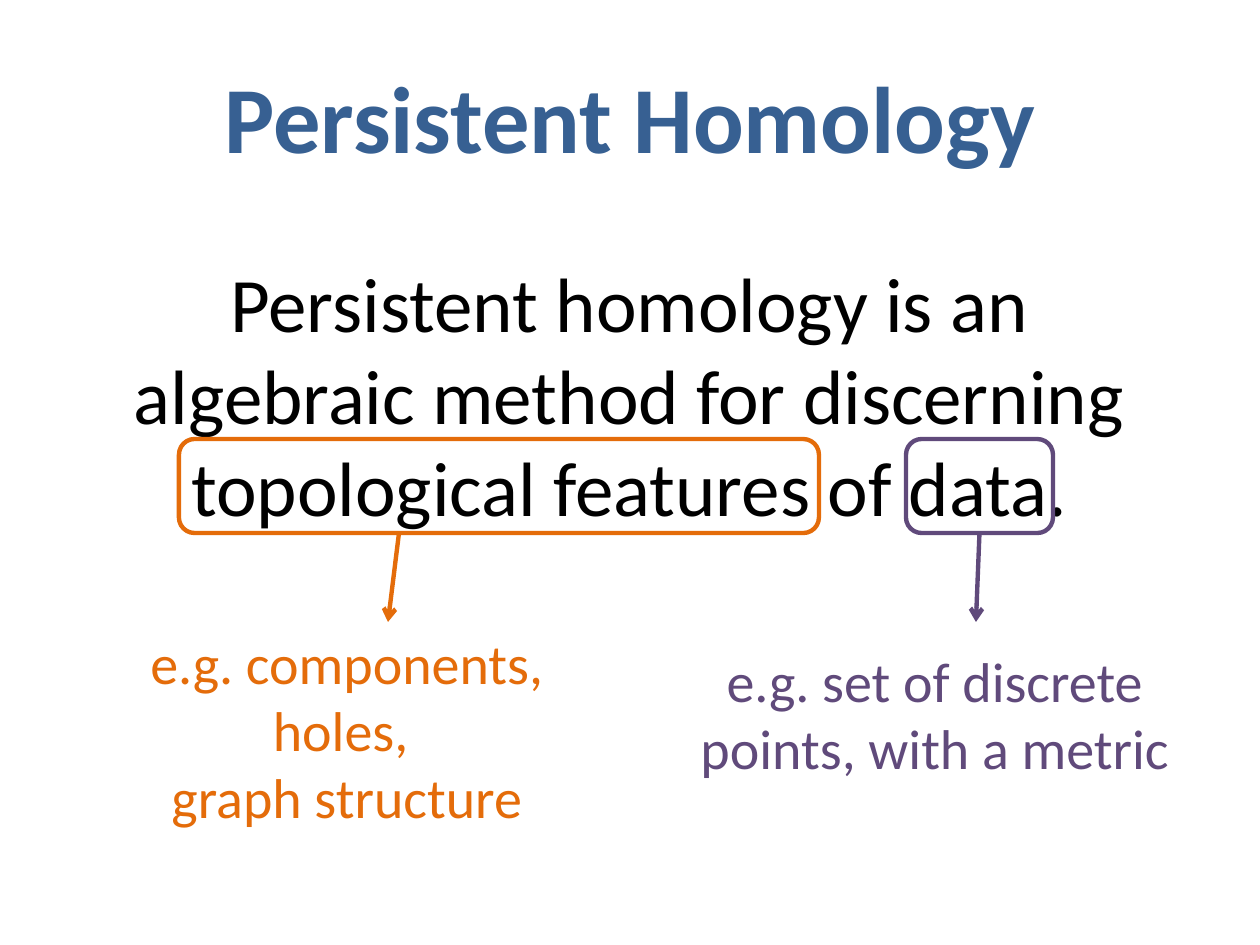
from pptx import Presentation
from pptx.dml.color import RGBColor
from pptx.enum.shapes import MSO_CONNECTOR as Link, MSO_SHAPE as Shape
from pptx.enum.text import PP_ALIGN as Align
from pptx.oxml.ns import qn
from pptx.util import Pt
from lxml.etree import SubElement as Sub

PX = 914400 / 126
BLUE, ORANGE, PURPLE, BLACK = "376092", "E46C0A", "604A7B", "000000"


def px(*vals):
    return [round(v * PX) for v in vals]


def rgb(code):
    return RGBColor.from_string(code)


def style(line, color):
    line.color.rgb = rgb(color)
    line.width = Pt(2.5)


def text(slide, box, lines, size, color, bold=False):
    frame = slide.shapes.add_textbox(*px(*box)).text_frame
    frame.word_wrap = True
    for i, words in enumerate(lines):
        para = frame.add_paragraph() if i else frame.paragraphs[0]
        para.alignment = Align.CENTER
        run = para.add_run()
        run.text = words
        font = run.font
        font.name, font.size, font.bold = "Calibri", Pt(size), bold
        font.color.rgb = rgb(color)


def frame(slide, box, color):
    rect = slide.shapes.add_shape(Shape.ROUNDED_RECTANGLE, *px(*box))
    rect.shadow.inherit = False
    rect.fill.background()
    style(rect.line, color)
    return rect


def arrow(slide, ends, color):
    link = slide.shapes.add_connector(Link.STRAIGHT, *px(*ends))
    style(link.line, color)
    Sub(link.line._get_or_add_ln(), qn("a:tailEnd"), type="arrow")
    Sub(link._element.spPr, qn("a:effectLst"))
    return link


def main():
    prs = Presentation()
    prs.slide_width, prs.slide_height = px(1260, 945)
    slide = prs.slides.add_slide(prs.slide_layouts[6])

    # Title, notes and definition
    text(slide, (63, 53, 1134, 127), ["Persistent Homology"], 54, BLUE, True)
    text(slide, (116, 622, 462, 217),
         ["e.g. components, holes, ", "graph structure"], 32, ORANGE)
    text(slide, (683, 640, 504, 149),
         ["e.g. set of discrete points, with a metric"], 32, PURPLE)
    text(slide, (73, 249, 1113, 292),
         ["Persistent homology is an algebraic method for discerning "
          "topological features of data."], 44, BLACK)

    # Framed terms, each with an arrow to its note
    top, high, tip = 439, 94, 622
    base = top + high
    frame(slide, (179, top, 640, high), ORANGE)
    arrow(slide, (399, base, 388, tip), ORANGE)
    data = frame(slide, (906, top, 147, high), PURPLE)
    arrow(slide, (980, base, 976, tip), PURPLE).begin_connect(data, 2)

    prs.save("out.pptx")


if __name__ == "__main__":
    main()
